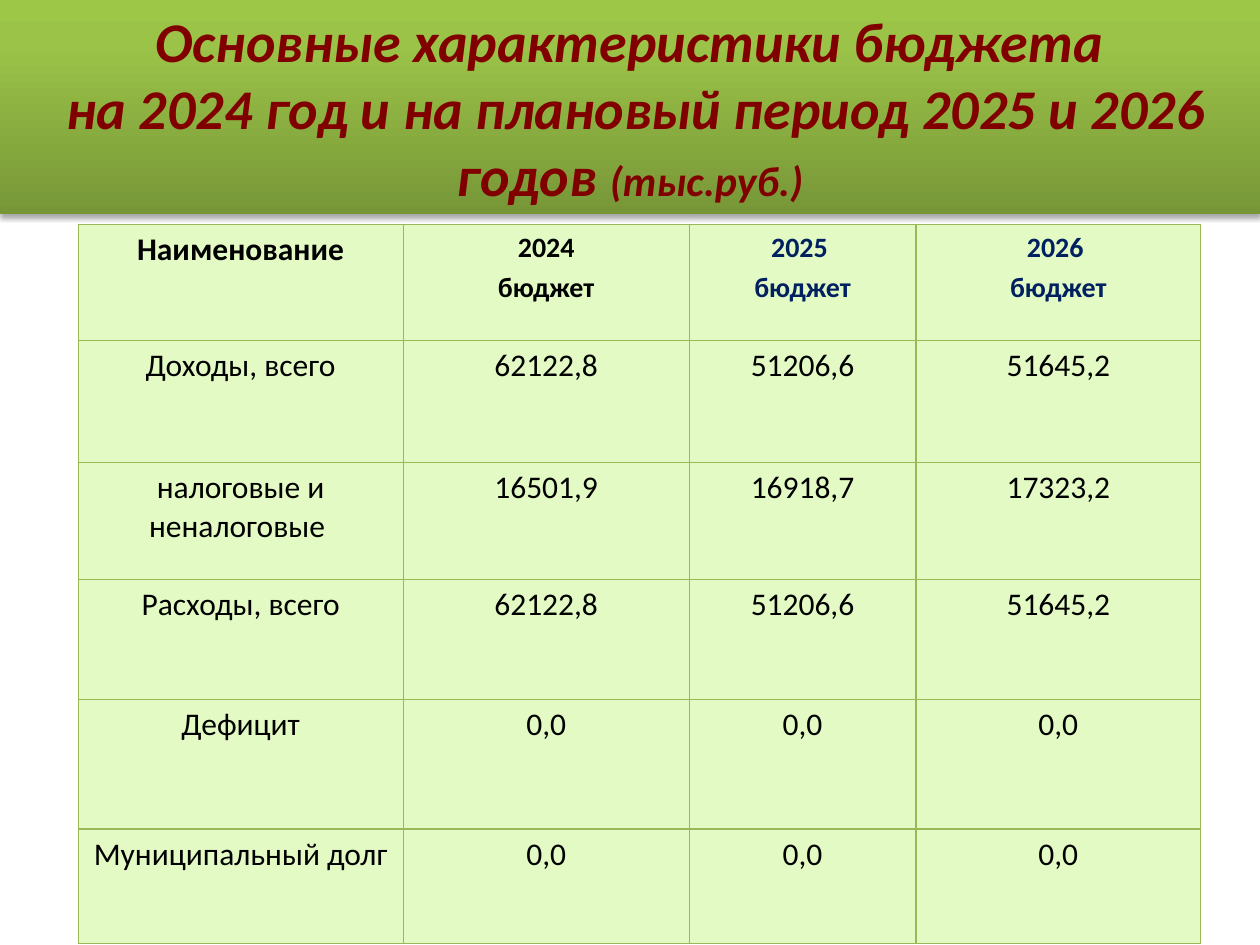
import copy

import pptx
import pptx.dml.color
import pptx.enum.shapes
import pptx.enum.text
import pptx.oxml
import pptx.oxml.ns
import pptx.util

Inches = pptx.util.Inches
Pt = pptx.util.Pt
qn = pptx.oxml.ns.qn
SPACE = 'xmlns:a="http://schemas.openxmlformats.org/drawingml/2006/main"'
COLS = [2.58, 2.27, 1.8, 2.26]
ROWS = [0.92, 0.97, 0.93, 0.95, 1.03, 0.91]
YEARS = [("2024", "000000"), ("2025 ", "002060"), ("2026 ", "002060")]
DATA = [
    ("Доходы, всего", "62122,8", "51206,6", "51645,2"),
    ("налоговые и неналоговые ", "16501,9", "16918,7", "17323,2"),
    ("Расходы, всего", "62122,8", "51206,6", "51645,2"),
    ("Дефицит", "0,0", "0,0", "0,0"),
    ("Муниципальный долг", "0,0", "0,0", "0,0"),
]


def paint(value):
    """Turn a hex string into a colour."""
    return pptx.dml.color.RGBColor.from_string(value)


def write(para, text, size=18, color="000000", bold=False, italic=False, gap=0):
    """Add formatted, centred text to a paragraph, breaking at newlines."""
    para.alignment = pptx.enum.text.PP_ALIGN.CENTER
    para.space_before = Pt(gap)
    for index, line in enumerate(text.split("\n")):
        if index:
            para.add_line_break()
        run = para.add_run()
        run.text = line
        font = run.font
        font.name, font.size = "Calibri", Pt(size)
        font.bold, font.italic = bold, italic
        font.color.rgb = paint(color)


def shade(fill, stops, angle):
    """Fill with a gradient of any number of stops."""
    fill.gradient()
    fill.gradient_angle = angle
    items = fill.gradient_stops[0]._gs.getparent()
    while len(items) < len(stops):
        items.append(copy.deepcopy(items[-1]))
    for stop, (place, color) in zip(fill.gradient_stops, stops):
        stop.position = place
        stop.color.rgb = paint(color)


def banner(slide, left, top, width, height):
    """Draw the title band with its soft shadow."""
    kind = pptx.enum.shapes.MSO_SHAPE.RECTANGLE
    band = slide.shapes.add_shape(kind, Inches(left), Inches(top), Inches(width), Inches(height))
    shade(band.fill, [(0, "779737"), (0.8, "9BC348"), (1, "9DC746")], 90)
    band.line.fill.background()
    band.shadow.inherit = False
    glow = pptx.oxml.parse_xml(
        f'<a:outerShdw {SPACE} blurRad="{Pt(3.1)}" dist="{Pt(1.8)}" dir="5400000" rotWithShape="0">'
        '<a:srgbClr val="000000"><a:alpha val="35000"/></a:srgbClr></a:outerShdw>')
    band._element.spPr.find(qn("a:effectLst")).append(glow)
    frame = band.text_frame
    frame.word_wrap = True
    frame.vertical_anchor = pptx.enum.text.MSO_ANCHOR.MIDDLE
    para = frame.paragraphs[0]
    look = dict(color="800000", bold=True, italic=True)
    write(para, "Основные характеристики бюджета\n на 2024 год и на плановый период 2025 и 2026 годов ",
          size=32, **look)
    write(para, "(тыс.руб.)", size=24, **look)


def edge(cell, color, width):
    """Give a cell four equal borders and a plain fill."""
    cell.fill.solid()
    cell.fill.fore_color.rgb = paint("E3FAC4")
    props = cell._tc.get_or_add_tcPr()
    for index, side in enumerate(("lnL", "lnR", "lnT", "lnB")):
        props.insert(index, pptx.oxml.parse_xml(
            f'<a:{side} {SPACE} w="{Pt(width)}"><a:solidFill>'
            f'<a:srgbClr val="{color}"/></a:solidFill></a:{side}>'))


def budget(slide, left, top):
    """Draw the table of budget figures by year."""
    frame = slide.shapes.add_table(len(ROWS), len(COLS), Inches(left), Inches(top),
                                   Inches(sum(COLS)), Inches(sum(ROWS)))
    table = frame.table
    table.first_row = table.horz_banding = False
    for column, size in zip(table.columns, COLS):
        column.width = Inches(size)
    for row, size in zip(table.rows, ROWS):
        row.height = Inches(size)
    for cell in table.iter_cells():
        edge(cell, "98B955", 0.75)
    write(table.cell(0, 0).text_frame.paragraphs[0], "Наименование", bold=True, gap=3.6)
    for col, (year, color) in enumerate(YEARS, 1):
        body = table.cell(0, col).text_frame
        look = dict(size=16, color=color, bold=True, gap=3.2)
        write(body.paragraphs[0], year, **look)
        write(body.add_paragraph(), "бюджет", **look)
    for row, values in enumerate(DATA, 1):
        for col, value in enumerate(values):
            para = table.cell(row, col).text_frame.paragraphs[0]
            write(para, value, gap=0 if col else 3.6)


def main():
    """Build the slide and save it."""
    deck = pptx.Presentation()
    deck.slide_width, deck.slide_height = Inches(10), Inches(7.5)
    slide = deck.slides.add_slide(deck.slide_layouts[6])
    banner(slide, 0, 0, 10, 1.7)
    budget(slide, 0.62, 1.78)
    deck.save("out.pptx")


if __name__ == "__main__":
    main()
